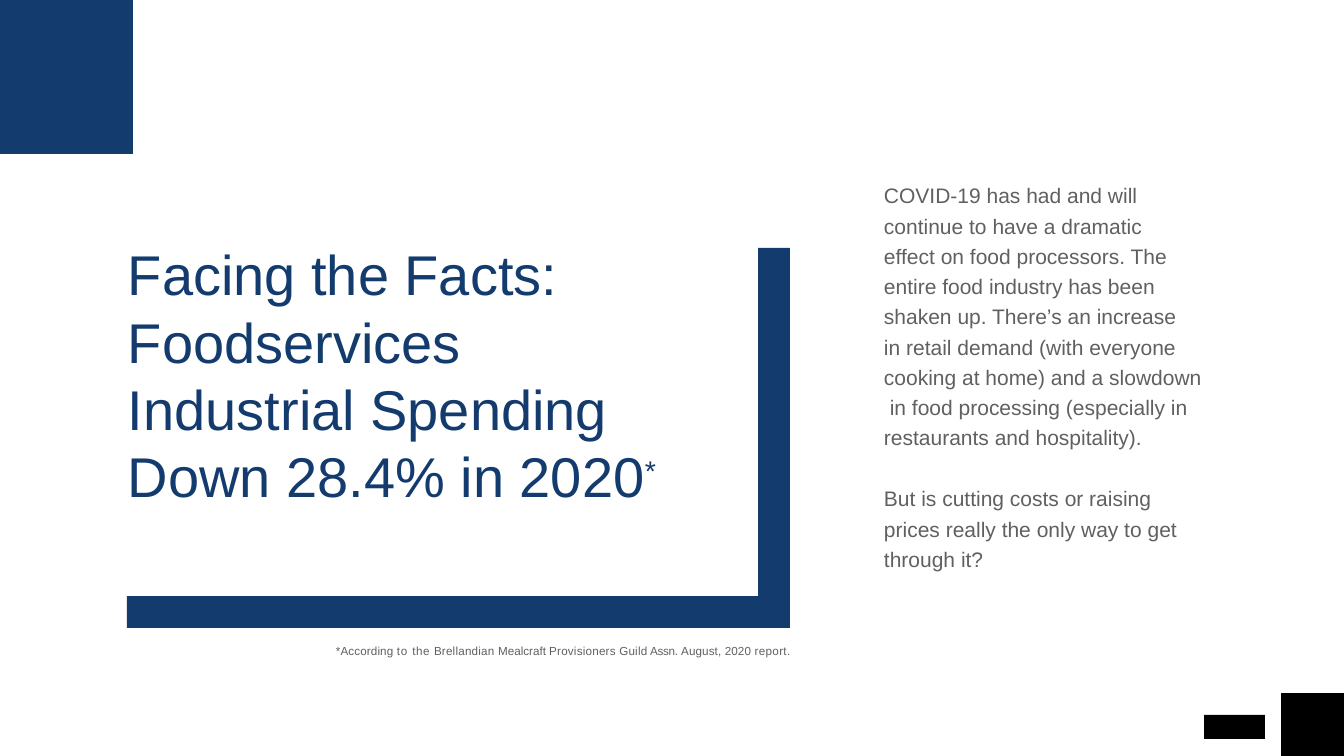
from pptx import Presentation
from pptx.dml.color import RGBColor
from pptx.enum.shapes import MSO_SHAPE
from pptx.enum.text import MSO_ANCHOR
from pptx.util import Pt

RECTANGLE = MSO_SHAPE.RECTANGLE
TOP = MSO_ANCHOR.TOP
EMU_PER_PX = 914400 / 84
NAVY, WHITE, BLACK, GREY = "143B6D", "FFFFFF", "000000", "606061"

TITLE = "Facing the Facts:\vFoodservices\vIndustrial Spending\vDown 28.4% in 2020"
IMPACT = [
    "COVID-19 has had and will\vcontinue to have a dramatic\veffect on food processors. The\v"
    "entire food industry has been\vshaken up. There’s an increase\vin retail demand (with everyone",
    "cooking at home) and a slowdown\v in food processing (especially in\v"
    "restaurants and hospitality).",
]
QUESTION = "But is cutting costs or raising\vprices really the only way to get\vthrough it?"
SOURCE_NOTE = [
    ("*According ", 10), ("to ", 70), ("the ", 50), ("Brellandian ", 20),
    ("Mealcraft ", 0), ("Provisioners Guild", 20), (" Assn. ", -20),
    ("August, 2020 ", 10), ("report.", 30),
]


def px(length):
    return round(length * EMU_PER_PX)


def color(value):
    return RGBColor.from_string(value)


def add_text(paragraph, text, *, size, fill, font="Arial", tracking=0, baseline=0):
    for index, line in enumerate(text.split("\v")):
        if index:
            paragraph.add_line_break()
        run = paragraph.add_run()
        run.text = line
        run.font.name = font
        run.font.size = Pt(size)
        run.font.color.rgb = color(fill)
        properties = run.font._element
        if tracking:
            properties.set("spc", str(tracking))
        if baseline:
            properties.set("baseline", str(baseline))


class SlideBuilder:
    """Draws blocks and text on one slide in a shared style."""

    def __init__(self, slide):
        self.slide = slide

    def block(self, left, top, width, height, fill):
        block = self.slide.shapes.add_shape(
            RECTANGLE, px(left), px(top), px(width), px(height))
        block.shadow.inherit = False
        block.fill.solid()
        block.fill.fore_color.rgb = color(fill)
        block.line.fill.background()

    def text(self, left, top, width, height, paragraphs, *, spacing=1.0, **style):
        frame = self.slide.shapes.add_textbox(
            px(left), px(top), px(width), px(height)).text_frame
        frame.word_wrap = True
        frame.vertical_anchor = TOP
        frame.margin_left = frame.margin_right = frame.margin_bottom = 0
        frame.margin_top = px(1)
        for index, runs in enumerate(paragraphs):
            paragraph = frame.add_paragraph() if index else frame.paragraphs[0]
            paragraph.line_spacing = spacing
            paragraph.space_before = Pt(0 if index else 1)
            for content, overrides in runs:
                add_text(paragraph, content, **{**style, **overrides})


def main():
    presentation = Presentation()
    presentation.slide_width, presentation.slide_height = px(1344), px(756)
    builder = SlideBuilder(presentation.slides.add_slide(presentation.slide_layouts[6]))

    builder.block(0, 0, 133, 154, NAVY)
    builder.block(127, 248, 663, 380, NAVY)
    builder.block(0, 154, 758, 442, WHITE)
    builder.block(1281, 693, 63, 63, BLACK)
    builder.block(1204, 715, 61, 24, BLACK)

    asterisk = ("*", {"size": 42, "baseline": 32000})
    builder.text(128, 239, 560, 273, [[(TITLE, {}), asterisk]], size=48, fill=NAVY)
    body = {"spacing": 1.2, "size": 18, "fill": GREY}
    builder.text(884, 177, 340, 276, [[(part, {})] for part in IMPACT], **body)
    builder.text(884, 480, 340, 93, [[(QUESTION, {})]], **body)
    note = [(words, {"tracking": tracking}) for words, tracking in SOURCE_NOTE]
    builder.text(336, 643, 480, 15, [note], size=10, fill=GREY)

    presentation.save("out.pptx")


if __name__ == "__main__":
    main()
